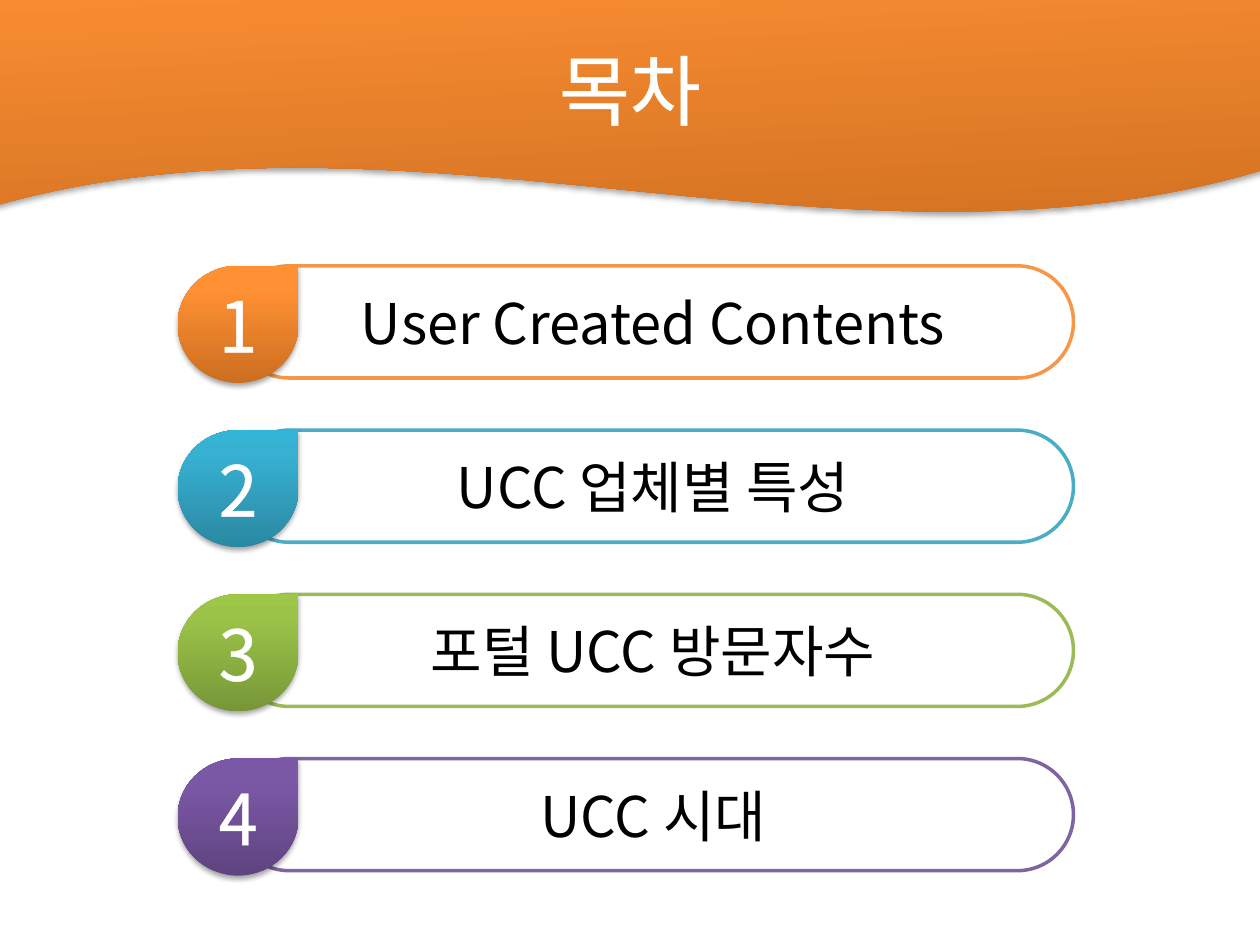
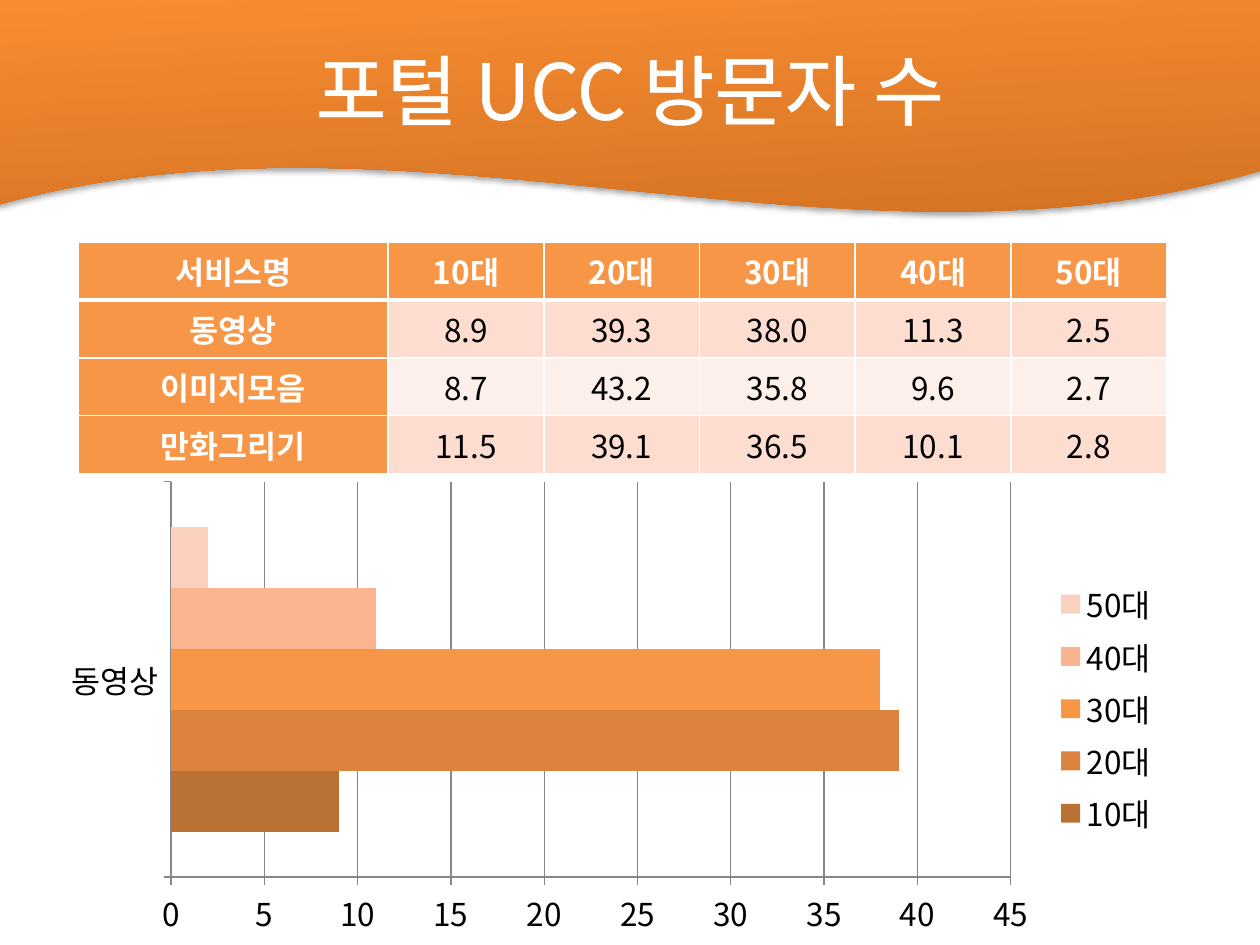
"""Build a contents slide and a visitor slide with a table and a bar chart."""
import lxml.etree
import pptx
import pptx.chart.data
import pptx.dml.color
import pptx.enum.chart
import pptx.enum.shapes
import pptx.enum.text
import pptx.oxml.ns
import pptx.util
from copy import deepcopy

Inches = pptx.util.Inches
Pt = pptx.util.Pt
qn = pptx.oxml.ns.qn
add = lxml.etree.SubElement
hue = pptx.dml.color.RGBColor.from_string
forms = pptx.enum.shapes.MSO_SHAPE
mid = pptx.enum.text.MSO_ANCHOR.MIDDLE
center = pptx.enum.text.PP_ALIGN.CENTER

FACE = "Noto Sans CJK KR"
WHITE, BLACK, ORANGE, GREY = "FFFFFF", "000000", "F79646", "878787"
GLOW = ["CC6E20", "FF9034", "FF9136"]


def style(font, size, color, bold=False, edge=False):
    """Set face, size and colour of a font, with an optional white outline."""
    font.size = Pt(size)
    font.bold = bold
    font.color.rgb = hue(color)
    font.name = FACE
    add(font._element, qn("a:ea"), typeface=FACE)
    if edge:
        line = lxml.etree.Element(qn("a:ln"), w=str(Pt(1.45)))
        fill = add(line, qn("a:solidFill"))
        add(fill, qn("a:srgbClr"), val=WHITE)
        font._element.insert(0, line)


def gloss(shape, colors):
    """Give a shape a three-stop upward gradient and a soft shadow."""
    shape.line.fill.background()
    shape.fill.gradient()
    shape.fill.gradient_angle = 90
    stops = shape._element.spPr.find(".//" + qn("a:gsLst"))
    stops.append(deepcopy(stops[-1]))
    for stop, color, place in zip(shape.fill.gradient_stops, colors, (0, 0.8, 1)):
        stop.color.rgb = hue(color)
        stop.position = place
    shape.shadow.inherit = False
    effects = shape._element.spPr.find(qn("a:effectLst"))
    shade = add(effects, qn("a:outerShdw"), blurRad=str(Pt(3.1)),
                dist=str(Pt(1.8)), dir="5400000", rotWithShape="0")
    tint = add(shade, qn("a:srgbClr"), val=BLACK)
    add(tint, qn("a:alpha"), val="35000")


deck = pptx.Presentation()
deck.slide_width, deck.slide_height = Inches(10), Inches(7.5)

pages = []
for title in ["목차", "포털 UCC 방문자 수"]:
    page = deck.slides.add_slide(deck.slide_layouts[6])
    wave = page.shapes.add_shape(
        forms.WAVE, Inches(-0.56), Inches(-0.82), Inches(10.9), Inches(2.66))
    wave.rotation = 357.1
    gloss(wave, GLOW)
    box = page.shapes.add_textbox(Inches(0.5), Inches(0.08), Inches(9), Inches(1.25))
    frame = box.text_frame
    frame.word_wrap = True
    frame.vertical_anchor = mid
    frame.text = title
    frame.paragraphs[0].alignment = center
    style(frame.paragraphs[0].font, 44, WHITE, edge=True)
    pages.append(page)
index, visits = pages

topics = [
    ("User Created Contents", ORANGE, GLOW),
    ("UCC 업체별 특성", "4BACC6", ["2A88A2", "37B1D2", "34B4D6"]),
    ("포털 UCC 방문자수", "9BBB59", ["779737", "9BC348", "9DC746"]),
    ("UCC 시대", "8064A2", ["5F4480", "7B58A6", "7C57A8"]),
]
for row, (topic, rim, glow) in enumerate(topics):
    top = Inches(2.11 + 3.91 * row / 3)
    pill = index.shapes.add_shape(
        forms.ROUNDED_RECTANGLE, Inches(1.85), top, Inches(6.67), Inches(0.89))
    pill.adjustments[0] = 0.5
    pill.shadow.inherit = False
    pill.fill.solid()
    pill.fill.fore_color.rgb = hue(WHITE)
    pill.line.color.rgb = hue(rim)
    pill.line.width = Pt(2)
    drop = index.shapes.add_shape(
        forms.TEAR, Inches(1.41), top, Inches(0.96), Inches(0.93))
    gloss(drop, glow)
    for shape, text, size, color, edge in [
            (pill, topic, 32, BLACK, False), (drop, str(row + 1), 40, WHITE, True)]:
        shape.text_frame.text = text
        shape.text_frame.vertical_anchor = mid
        para = shape.text_frame.paragraphs[0]
        para.alignment = center
        style(para.font, size, color, edge=edge)

ages = ["10대", "20대", "30대", "40대", "50대"]
shares = {
    "동영상": [8.9, 39.3, 38.0, 11.3, 2.5],
    "이미지모음": [8.7, 43.2, 35.8, 9.6, 2.7],
    "만화그리기": [11.5, 39.1, 36.5, 10.1, 2.8],
}
rows = [["서비스명", *ages]]
rows += [[name, *(f"{part:.1f}" for part in parts)] for name, parts in shares.items()]
grid = visits.shapes.add_table(
    4, 6, Inches(0.62), Inches(1.92), Inches(8.64), Inches(1.84)).table
for col, column in enumerate(grid.columns):
    column.width = Inches((8.64 - 2.46) / 5 if col else 2.46)
for row, texts in enumerate(rows):
    for col, text in enumerate(texts):
        head = row == 0 or col == 0
        cell = grid.cell(row, col)
        cell.text = text
        cell.vertical_anchor = mid
        para = cell.text_frame.paragraphs[0]
        para.alignment = center
        style(para.font, 18, WHITE if head else BLACK, bold=head)
        props = cell._tc.get_or_add_tcPr()
        widths = {"L": 1, "R": 1, "T": 3 if row == 1 else 1, "B": 3 if row == 0 else 1}
        for side, width in widths.items():
            line = add(props, qn("a:ln" + side), w=str(Pt(width)))
            add(add(line, qn("a:solidFill")), qn("a:srgbClr"), val=WHITE)
        cell.fill.solid()
        band = "FCDDCF" if row % 2 else "FDEFE9"
        cell.fill.fore_color.rgb = hue(ORANGE if head else band)

data = pptx.chart.data.CategoryChartData()
data.categories = ["동영상"]
for age, share in zip(ages, shares["동영상"]):
    data.add_series(age, [round(share)])
chart = visits.shapes.add_chart(
    pptx.enum.chart.XL_CHART_TYPE.BAR_CLUSTERED,
    Inches(0.39), Inches(3.75), Inches(8.91), Inches(3.75), data).chart
style(chart.font, 18, BLACK)
chart.has_title = False
chart.has_legend = True
chart.legend.position = pptx.enum.chart.XL_LEGEND_POSITION.RIGHT
chart.legend.include_in_layout = False
plot = chart.plots[0]
plot.vary_by_categories = False
plot.gap_width = 150
plot.overlap = 0
for bar, color in zip(plot.series, ["B97234", "DC843F", ORANGE, "FAB590", "FBD0BC"]):
    bar.format.fill.solid()
    bar.format.fill.fore_color.rgb = hue(color)
for axis in (chart.category_axis, chart.value_axis):
    axis.major_tick_mark = pptx.enum.chart.XL_TICK_MARK.OUTSIDE
    axis.format.line.color.rgb = hue(GREY)
scale = chart.value_axis
scale.minimum_scale, scale.maximum_scale, scale.major_unit = 0, 45, 5
scale.tick_labels.number_format = "0"
scale.tick_labels.number_format_is_linked = False
scale.has_major_gridlines = True
scale.major_gridlines.format.line.color.rgb = hue(GREY)

deck.save("out.pptx")
